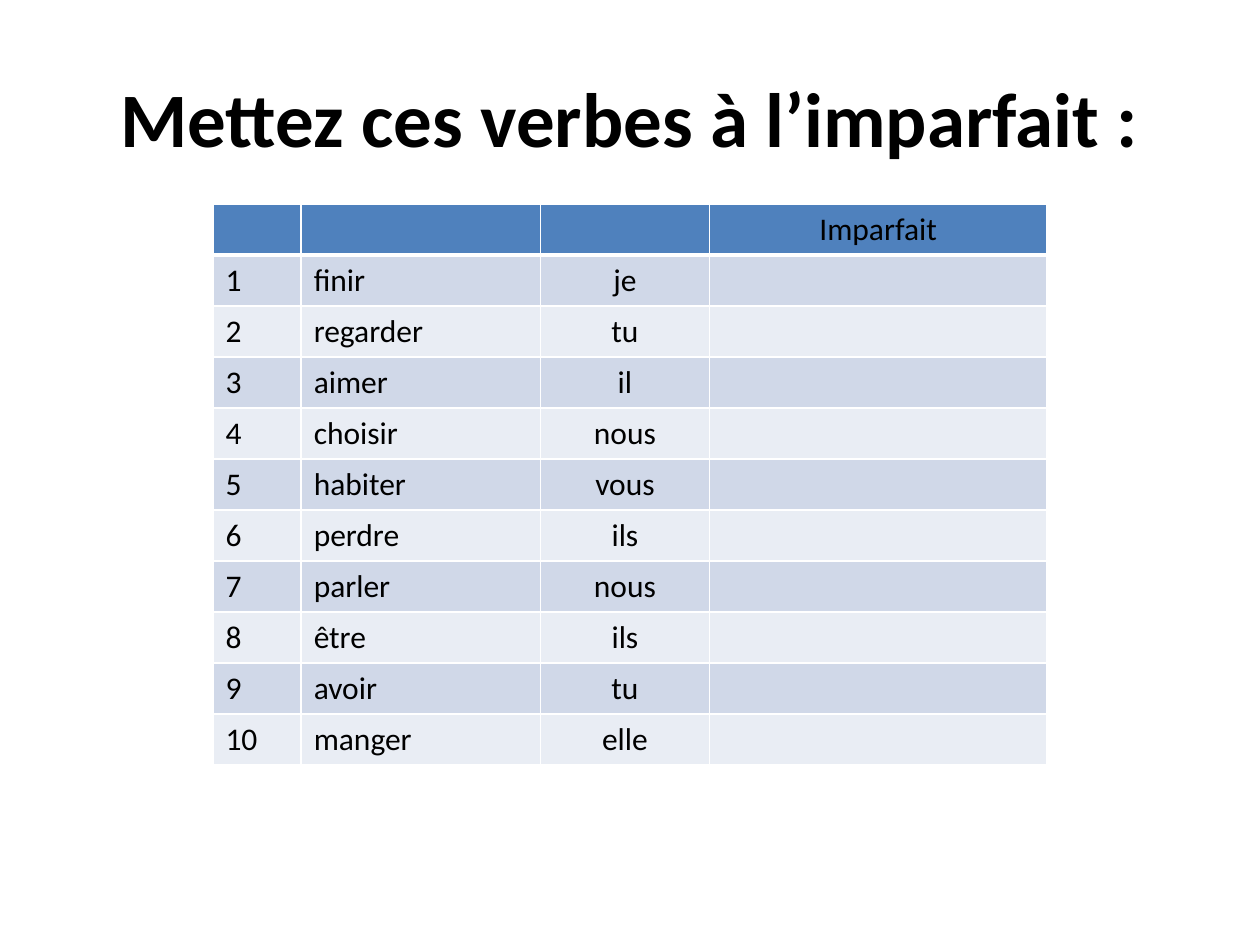
from lxml.etree import SubElement
from pptx import Presentation
from pptx.dml.color import RGBColor
from pptx.enum.text import MSO_ANCHOR, PP_ALIGN
from pptx.oxml.ns import qn
from pptx.util import Inches, Pt

INK = {"text": "000000", "head": "4F81BD", "dark": "D0D8E8",
       "light": "E9EDF4", "line": "FFFFFF"}
WIDE, HIGH = Inches(10), Inches(7.5)
COLS = [0.07, 0.19, 0.134, 0.268]
ROW = 0.054
VERBS = [("finir", "je"), ("regarder", "tu"), ("aimer", "il"),
         ("choisir", "nous"), ("habiter", "vous"), ("perdre", "ils"),
         ("parler", "nous"), ("être", "ils"), ("avoir", "tu"),
         ("manger", "elle")]


def write(frame, text, size, bold=False, align=PP_ALIGN.LEFT):
    """Put one styled paragraph in a text frame."""
    para = frame.paragraphs[0]
    para.text = text
    para.alignment = align
    for run in para.runs:
        font = run.font
        font.name, font.size, font.bold = "Calibri", Pt(size), bold
        font.color.rgb = RGBColor.from_string(INK["text"])


def title(slide, text):
    """Add the centred heading."""
    box = slide.shapes.add_textbox(int(WIDE * 0.05), int(HIGH * 0.04),
                                   int(WIDE * 0.9), Inches(1.25))
    frame = box.text_frame
    frame.word_wrap = True
    frame.vertical_anchor = MSO_ANCHOR.MIDDLE
    write(frame, text, 44, True, PP_ALIGN.CENTER)


def edge(cell, side, width):
    """Draw one border of a cell."""
    props = cell._tc.get_or_add_tcPr()
    line = SubElement(props, qn(f"a:{side}"), w=str(Pt(width)))
    fill = SubElement(line, qn("a:solidFill"))
    SubElement(fill, qn("a:srgbClr"), val=INK["line"])


def paint(cell, row):
    """Give a cell its borders and its row colour."""
    thick = {(0, "lnB"), (1, "lnT")}
    for side in ("lnL", "lnR", "lnT", "lnB"):
        edge(cell, side, 3 if (row, side) in thick else 1)
    tone = "head" if row == 0 else "dark" if row % 2 else "light"
    cell.fill.solid()
    cell.fill.fore_color.rgb = RGBColor.from_string(INK[tone])


def grid(slide, rows):
    """Add the verb table, centred across the slide."""
    share = sum(COLS)
    frame = slide.shapes.add_table(
        len(rows), len(COLS), int(WIDE * (1 - share) / 2), Inches(1.62),
        int(WIDE * share), int(HIGH * ROW * len(rows)))
    table = frame.table
    for col, part in zip(table.columns, COLS):
        col.width = int(WIDE * part)
    for r, row in enumerate(rows):
        table.rows[r].height = int(HIGH * ROW)
        for c, text in enumerate(row):
            cell = table.cell(r, c)
            paint(cell, r)
            align = PP_ALIGN.CENTER if c > 1 else PP_ALIGN.LEFT
            write(cell.text_frame, text, 18, align=align)


def main():
    """Build and save the slide."""
    deck = Presentation()
    deck.slide_width, deck.slide_height = WIDE, HIGH
    slide = deck.slides.add_slide(deck.slide_layouts[6])
    title(slide, "Mettez ces verbes à l’imparfait :")
    body = [(str(n), verb, who, "") for n, (verb, who) in enumerate(VERBS, 1)]
    grid(slide, [("", "", "", "Imparfait")] + body)
    deck.save("out.pptx")


if __name__ == "__main__":
    main()
